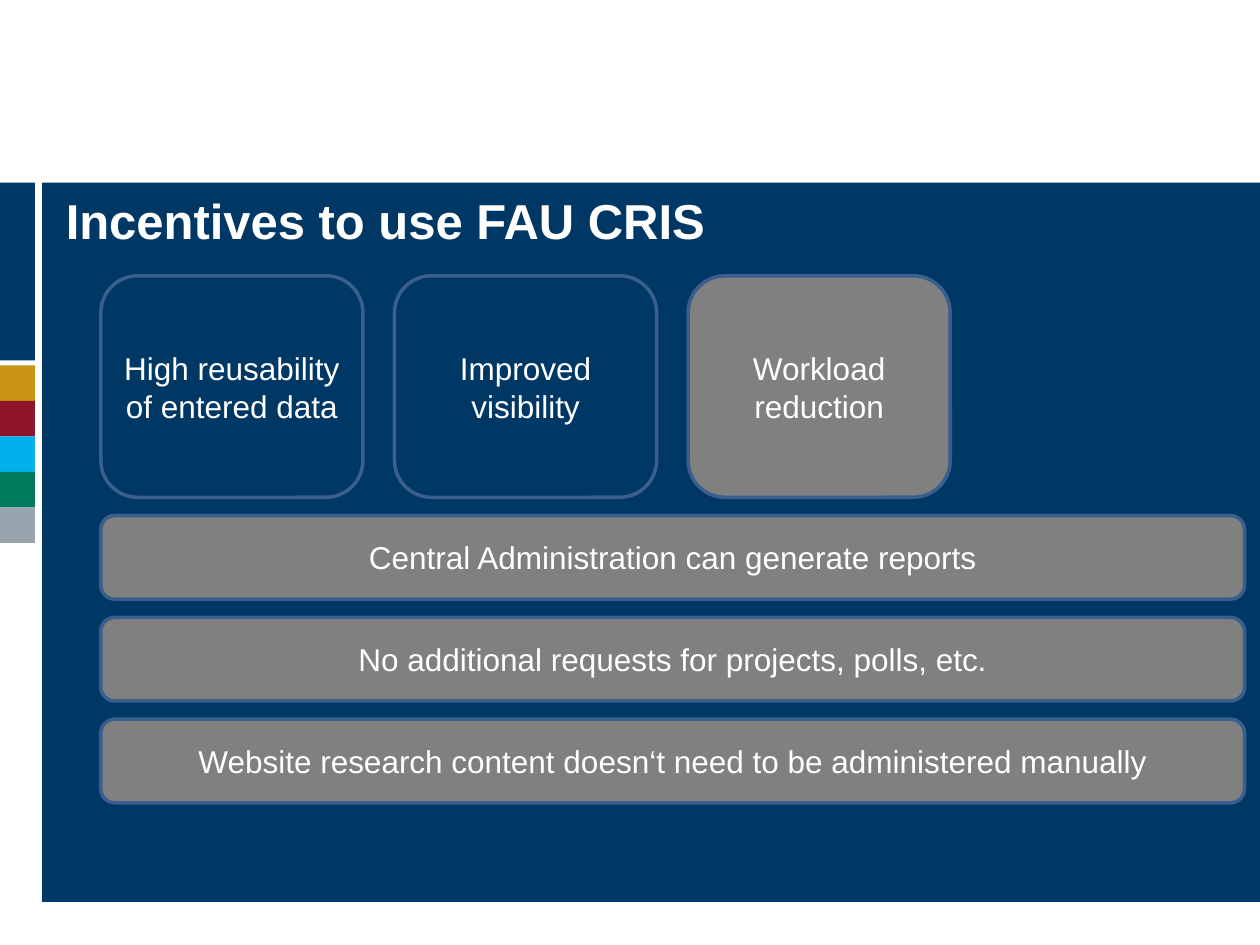
import dataclasses

import pptx
import pptx.dml.color
import pptx.enum.shapes
import pptx.enum.text
import pptx.util

Pt = pptx.util.Pt
SHAPE = pptx.enum.shapes.MSO_SHAPE
ANCHOR = pptx.enum.text.MSO_ANCHOR
ALIGN = pptx.enum.text.PP_ALIGN


@dataclasses.dataclass(frozen=True)
class Theme:
    font: str = "Arial"
    title_size: int = 28
    body_size: int = 18
    text: str = "FFFFFF"
    navy: str = "003865"
    grey: str = "808080"
    outline: str = "3A5F8C"
    stripes: tuple = ("C99313", "8D1429", "00B1EB", "007A5D", "98A4AE")


class SlideBuilder:
    def __init__(self, slide, theme):
        self.slide = slide
        self.theme = theme

    def color(self, value):
        return pptx.dml.color.RGBColor.from_string(value)

    def add_span(self, para, text, size, bold=False):
        span = para.add_run()
        span.text = text
        span.font.name = self.theme.font
        span.font.size = Pt(size)
        span.font.bold = bold
        span.font.color.rgb = self.color(self.theme.text)

    def block(self, left, top, width, height, fill, preset=SHAPE.RECTANGLE):
        box = self.slide.shapes.add_shape(
            preset, Pt(left), Pt(top), Pt(width), Pt(height))
        box.shadow.inherit = False
        box.fill.solid()
        box.fill.fore_color.rgb = self.color(fill)
        box.line.fill.background()
        return box

    def label_box(self, left, top, width, height, fill, text):
        box = self.block(left, top, width, height, fill, SHAPE.ROUNDED_RECTANGLE)
        box.line.color.rgb = self.color(self.theme.outline)
        box.line.width = Pt(2)
        frame = box.text_frame
        frame.word_wrap = True
        frame.margin_left = frame.margin_right = Pt(3)
        frame.vertical_anchor = ANCHOR.MIDDLE
        para = frame.paragraphs[0]
        para.alignment = ALIGN.CENTER
        self.add_span(para, text, self.theme.body_size)

    def title(self, left, top, width, height, text):
        box = self.slide.shapes.title
        box.left, box.top, box.width, box.height = (
            Pt(left), Pt(top), Pt(width), Pt(height))
        frame = box.text_frame
        frame.word_wrap = True
        frame.auto_size = pptx.enum.text.MSO_AUTO_SIZE.NONE
        frame.margin_left = frame.margin_right = 0
        frame.margin_top = frame.margin_bottom = 0
        frame.vertical_anchor = ANCHOR.TOP
        para = frame.paragraphs[0]
        para.alignment = ALIGN.LEFT
        para.line_spacing = Pt(32)
        self.add_span(para, text, self.theme.title_size, bold=True)
        # Bring the title in front of the background panels
        box.element.getparent().append(box.element)


def main():
    deck = pptx.Presentation()
    deck.slide_width, deck.slide_height = Pt(720), Pt(540)
    theme = Theme()
    page = SlideBuilder(deck.slides.add_slide(deck.slide_layouts[5]), theme)

    # Side strip and main panel
    stripe_height = 20.3
    for index, fill in enumerate(theme.stripes):
        page.block(0, 208.8 + index * stripe_height, 20, stripe_height, fill)
    page.block(0, 104.4, 20, 101.5, theme.navy)
    page.block(24, 104.4, 696, 411, theme.navy)

    page.title(37.6, 110.2, 674.6, 37.4, "Incentives to use FAU CRIS")

    # Incentive cards, the current one in grey
    left = 57.6
    cards = (
        ("High reusability of entered data", theme.navy),
        ("Improved visibility", theme.navy),
        ("Workload reduction", theme.grey),
    )
    for index, (text, fill) in enumerate(cards):
        page.label_box(left + index * 167.8, 157.6, 149.8, 126.6, fill, text)

    # Benefits of the current incentive
    benefits = (
        "Central Administration can generate reports",
        "No additional requests for projects, polls, etc.",
        "Website research content doesn‘t need to be administered manually",
    )
    for index, text in enumerate(benefits):
        page.label_box(left, 294.6 + index * 58.2, 653.6, 47.8, theme.grey, text)

    deck.save("out.pptx")


if __name__ == "__main__":
    main()
